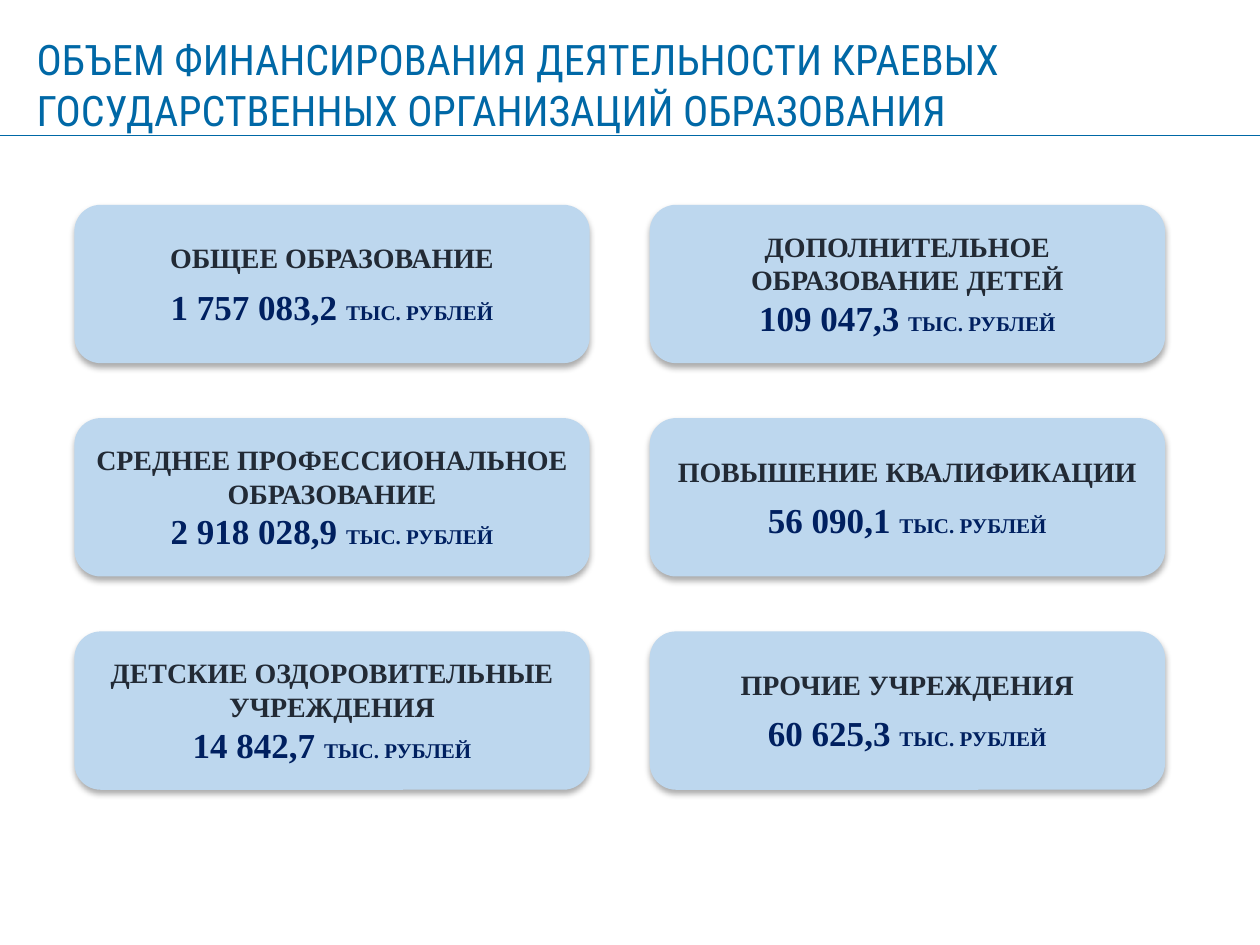
from lxml import etree
from pptx import Presentation
from pptx.dml.color import RGBColor
from pptx.enum import shapes, text
from pptx.oxml import ns, parse_xml
from pptx.util import Pt

TITLE = "ОБЪЕМ ФИНАНСИРОВАНИЯ ДЕЯТЕЛЬНОСТИ КРАЕВЫХ ГОСУДАРСТВЕННЫХ ОРГАНИЗАЦИЙ ОБРАЗОВАНИЯ"
UNIT = "ТЫС. РУБЛЕЙ"
# One row per line of cards: (name, amount, gap between name and amount)
CARDS = [
    [("ОБЩЕЕ ОБРАЗОВАНИЕ", "1 757 083,2", 6),
     ("ДОПОЛНИТЕЛЬНОЕ ОБРАЗОВАНИЕ ДЕТЕЙ", "109 047,3", 0)],
    [("СРЕДНЕЕ ПРОФЕССИОНАЛЬНОЕ ОБРАЗОВАНИЕ", "2 918 028,9", 0),
     ("ПОВЫШЕНИЕ КВАЛИФИКАЦИИ", "56 090,1", 6)],
    [("ДЕТСКИЕ ОЗДОРОВИТЕЛЬНЫЕ УЧРЕЖДЕНИЯ", "14 842,7", 0),
     ("ПРОЧИЕ УЧРЕЖДЕНИЯ", "60 625,3", 6)],
]

BLUE, PALE, DARK, NAVY = "0068A6", "BDD7EE", "222A35", "002060"
SERIF = "Times New Roman"
WIDTH, HEIGHT = 720, 540
LEFT, TOP = 42.5, 117
CARD_W, CARD_H = 294.5, 90.5
STEP_X, STEP_Y = 328.75, 121.9
RULE_Y = 77.5

SHADOW = f"""<a:effectLst {ns.nsdecls('a')}>
  <a:outerShdw blurRad="{Pt(3.5)}" dist="{Pt(2.2)}" dir="5400000" algn="t" rotWithShape="0">
    <a:srgbClr val="000000"><a:alpha val="32000"/></a:srgbClr>
  </a:outerShdw>
</a:effectLst>"""
TEXT_OUTLINE = f"""<a:ln {ns.nsdecls('a')} w="{Pt(1)}">
  <a:solidFill><a:srgbClr val="{BLUE}"/></a:solidFill>
</a:ln>"""


def color(value):
    return RGBColor.from_string(value)


def add_run(p, words, size, ink, font=SERIF, bold=True):
    r = p.add_run()
    r.text = words
    r.font.size, r.font.name, r.font.bold = Pt(size), font, bold
    r.font.color.rgb = color(ink)
    return r


def add_title(s):
    sp = s.shapes.title
    sp.left, sp.top, sp.width, sp.height = Pt(13.7), Pt(15.8), Pt(699), Pt(65.5)
    tf = sp.text_frame
    tf.word_wrap = True
    tf.auto_size = text.MSO_AUTO_SIZE.NONE
    tf.vertical_anchor = text.MSO_ANCHOR.TOP
    p = tf.paragraphs[0]
    p.alignment = text.PP_ALIGN.LEFT
    r = add_run(p, TITLE, 24, BLUE, "Roboto Condensed", False)
    r.font._element.insert(0, parse_xml(TEXT_OUTLINE))


def add_rule(s):
    line = s.shapes.add_connector(
        shapes.MSO_CONNECTOR.STRAIGHT, 0, Pt(RULE_Y), Pt(WIDTH), Pt(RULE_Y))
    line.line.color.rgb = color(BLUE)
    line.line.width = Pt(1)
    etree.SubElement(line._element.spPr, ns.qn("a:effectLst"))


def add_card(s, x, y, name, amount, gap):
    sp = s.shapes.add_shape(
        shapes.MSO_SHAPE.ROUNDED_RECTANGLE, Pt(x), Pt(y), Pt(CARD_W), Pt(CARD_H))
    sp.fill.solid()
    sp.fill.fore_color.rgb = color(PALE)
    sp.line.fill.background()
    sp._element.spPr.append(parse_xml(SHADOW))
    tf = sp.text_frame
    tf.word_wrap = True
    tf.vertical_anchor = text.MSO_ANCHOR.MIDDLE
    heading, value = tf.paragraphs[0], tf.add_paragraph()
    heading.alignment = value.alignment = text.PP_ALIGN.CENTER
    value.space_before = Pt(gap)
    add_run(heading, name, 16, DARK)
    add_run(value, amount + " ", 20, NAVY)
    add_run(value, UNIT, 12, NAVY)


def main():
    prs = Presentation()
    prs.slide_width, prs.slide_height = Pt(WIDTH), Pt(HEIGHT)
    s = prs.slides.add_slide(prs.slide_layouts[5])
    add_title(s)
    add_rule(s)
    for row, cards in enumerate(CARDS):
        for col, card in enumerate(cards):
            add_card(s, LEFT + col * STEP_X, TOP + row * STEP_Y, *card)
    prs.save("out.pptx")


if __name__ == "__main__":
    main()
